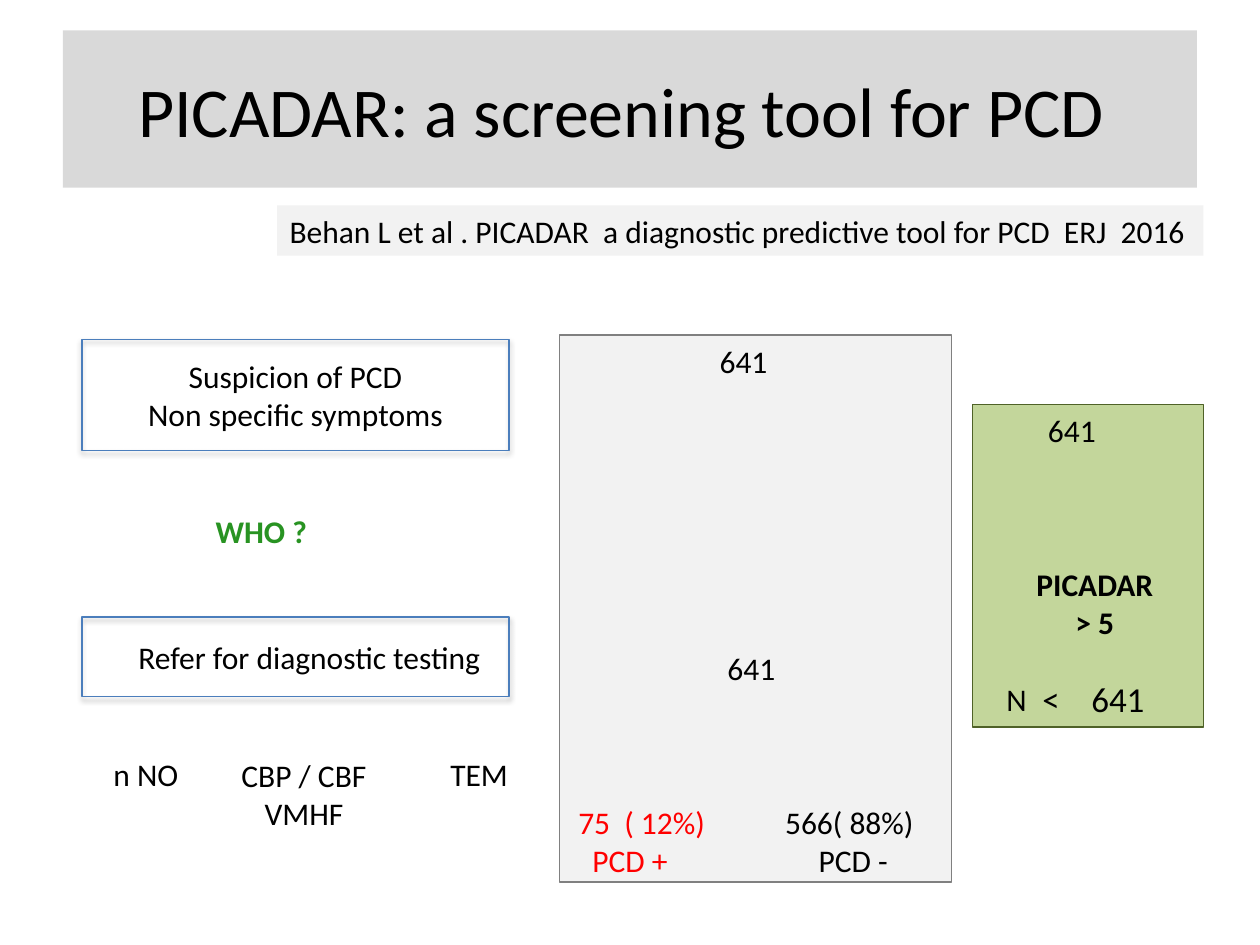
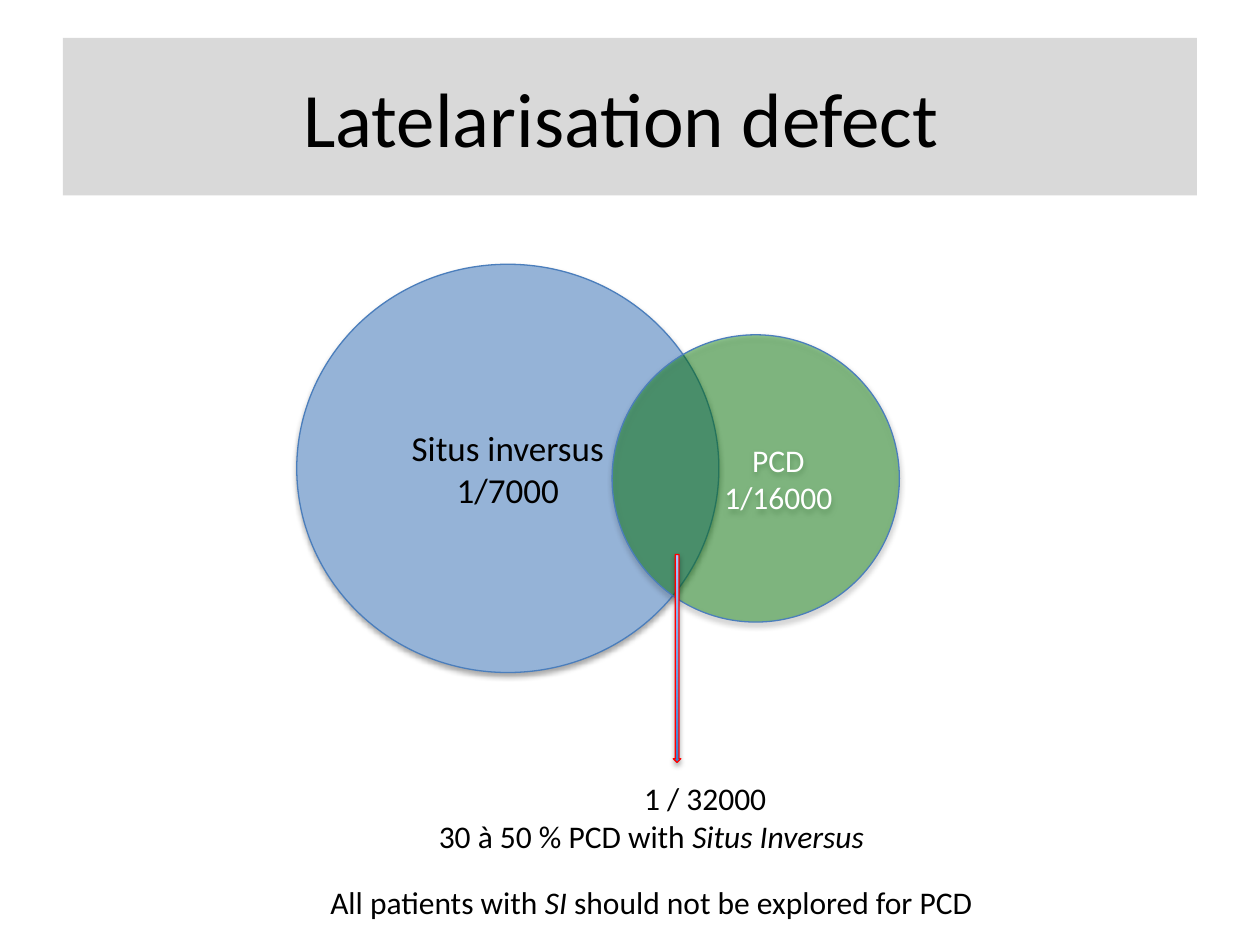
from dataclasses import dataclass

from lxml.etree import SubElement
from pptx import Presentation
from pptx.dml.color import RGBColor
from pptx.enum.shapes import MSO_SHAPE
from pptx.enum.text import MSO_ANCHOR, PP_ALIGN
from pptx.oxml.ns import qn
from pptx.util import Inches, Pt

FONT = "Calibri"
BLACK, WHITE, RED, GREEN = "000000", "FFFFFF", "FF0000", "289322"
BAND, PALE, BLUE = "D9D9D9", "F2F2F2", "4B7EBC"
COLUMNS, ROWS = 10, 7.5  # grid cells on a slide
LINE = 0.305  # height of one text line, in grid rows


@dataclass
class Box:
    """An area measured in grid columns and rows."""
    left: float
    top: float
    width: float
    height: float

    def around(self, x, y, width, height):
        """A box whose centre lies at shares x and y of this one."""
        return Box(self.left + x * self.width - width / 2,
                   self.top + y * self.height - height / 2, width, height)

    def line(self, index, x, width=1.5, lines=1):
        """A box for text lines from the given line on, centred at share x."""
        middle = 0.05 + (index + lines / 2) * LINE
        return self.around(x, middle / self.height, width, lines * LINE)

    def place(self):
        column, row = Inches(10) / COLUMNS, Inches(7.5) / ROWS
        return (round(self.left * column), round(self.top * row),
                round(self.width * column), round(self.height * row))


def color(value):
    return RGBColor.from_string(value)


def write(shape, text, size=18, ink=BLACK, bold=False, align=PP_ALIGN.CENTER,
          left=0.0, right=0.0, wrap=True):
    """Fill a shape with lines of text; *stars* enclose italics."""
    frame = shape.text_frame
    frame.word_wrap = wrap
    frame.vertical_anchor = MSO_ANCHOR.MIDDLE
    frame.margin_left, frame.margin_right = Inches(left), Inches(right)
    frame.margin_top = frame.margin_bottom = 0
    for number, line in enumerate(text.split("\n")):
        para = frame.add_paragraph() if number else frame.paragraphs[0]
        para.alignment = align
        for index, piece in enumerate(line.split("*")):
            span = para.add_run()
            span.text = piece
            span.font.name, span.font.size = FONT, Pt(size)
            span.font.bold, span.font.italic = bold, index % 2 == 1
            span.font.color.rgb = color(ink)


def label(page, box, text, **style):
    write(page.shapes.add_textbox(*box.place()), text, **style)


def add_shadow(shape):
    effects = shape.element.spPr.find(qn("a:effectLst"))
    outer = SubElement(effects, qn("a:outerShdw"), blurRad=str(Pt(3.1)),
                       dist=str(Pt(1.8)), dir="5400000", rotWithShape="0")
    tint = SubElement(outer, qn("a:srgbClr"), val=BLACK)
    SubElement(tint, qn("a:alpha"), val="35000")


def draw(page, box, kind=MSO_SHAPE.RECTANGLE, fill=None, line=None,
         opacity=100, shadow=False):
    shape = page.shapes.add_shape(kind, *box.place())
    shape.shadow.inherit = False
    if fill:
        shape.fill.solid()
        shape.fill.fore_color.rgb = color(fill)
    else:
        shape.fill.background()
    if opacity < 100:
        tint = shape.element.spPr.find(qn("a:solidFill")).find(qn("a:srgbClr"))
        SubElement(tint, qn("a:alpha"), val=str(opacity * 1000))
    if line:
        shape.line.color.rgb = color(line)
        shape.line.width = Pt(0.75)
    else:
        shape.line.fill.background()
    if shadow:
        add_shadow(shape)
    return shape


def add_page(deck, title, top, size):
    """A blank slide with the grey title band."""
    page = deck.slides.add_slide(deck.slide_layouts[6])
    band = draw(page, Box(0.5, top, 9, 1.25), fill=BAND)
    write(band, title, size=size, left=0.1, right=0.24)
    return page


def referral_path(page, box):
    """Who is suspected, who is referred, and the tests that follow."""
    steps = [("Suspicion of PCD\nNon specific symptoms", 0.11, 0.88, 0),
             ("Refer for diagnostic testing", 0.65, 0.63, 0.22)]
    for text, middle, height, indent in steps:
        step = box.around(0.5, middle, box.width, height)
        draw(page, step, line=BLUE, shadow=True)
        label(page, step, text, left=indent)
    label(page, box.around(0.42, 0.39, 0.93, 0.4), "WHO ?", ink=GREEN, bold=True)
    tests = [("n NO", 0.15, 1), ("CBP / CBF\nVMHF", 0.52, 2), ("TEM", 0.93, 1)]
    for text, x, lines in tests:
        label(page, box.line(10.6, x, lines=lines), text)


def cohort_panel(page, box):
    draw(page, box, fill=PALE, line="808080")
    for index, x in ((0, 0.47), (8, 0.49)):
        label(page, box.line(index, x), "641")
    results = [("75  ( 12%)", "PCD +", 0.21, 0.18, RED),
               ("566( 88%)", "PCD -", 0.74, 0.75, BLACK)]
    for count, result, count_x, result_x, ink in results:
        label(page, box.line(12, count_x), count, ink=ink)
        label(page, box.line(13, result_x), result, ink=ink)


def score_panel(page, box):
    draw(page, box, fill="C3D69B", line="4F6228")
    label(page, box.line(0, 0.43), "641")
    label(page, box.line(4, 0.53, lines=2), "PICADAR\n> 5", bold=True)
    for text, x, size in (("N", 0.19, 18), ("<", 0.34, 20), ("641", 0.63, 20)):
        label(page, box.line(7, x, width=0.6), text, size=size)


def screening_slide(deck):
    page = add_page(deck, "PICADAR: a screening tool for PCD", 0.24, 40)
    citation = draw(page, Box(2.2, 1.63, 7.35, 0.4), fill=PALE)
    write(citation, "Behan L et al . PICADAR  a diagnostic predictive tool "
          "for PCD  ERJ  2016", align=PP_ALIGN.LEFT, left=0.1, wrap=False)
    referral_path(page, Box(0.65, 2.71, 3.39, 3.85))
    cohort_panel(page, Box(4.44, 2.66, 3.11, 4.34))
    score_panel(page, Box(7.72, 3.21, 1.83, 2.56))


def overlap_diagram(page, box):
    """Two overlapping circles and an arrow from the part they share."""
    situs = draw(page, box.around(0.35, 0.41, 3.35, 3.24), MSO_SHAPE.OVAL,
                 fill="95B3D7", line=BLUE, shadow=True)
    write(situs, "Situs inversus\n1/7000", size=20)
    disease = draw(page, box.around(0.76, 0.43, 2.28, 2.28), MSO_SHAPE.OVAL,
                   fill="008000", line=BLUE, opacity=42, shadow=True)
    write(disease, "PCD\n1/16000", ink=WHITE, left=0.36)
    arrow = draw(page, box.around(0.63, 0.79, 0.06, 1.65), MSO_SHAPE.DOWN_ARROW,
                 line=RED, shadow=True)
    arrow.fill.gradient()
    arrow.fill.gradient_angle = 90
    for stop, tint in zip(arrow.fill.gradient_stops, ("3F80CE", "A4C4FF")):
        stop.color.rgb = color(tint)


def overlap_findings(page, box):
    findings = [("1 / 32000", 0.58, 0.16),
                ("30 à 50 % PCD with *Situs Inversus*", 0.5, 0.42),
                ("All patients with *SI* should not be explored for PCD", 0.5, 0.86)]
    for text, x, y in findings:
        label(page, box.around(x, y, 5.37, LINE), text)


def lateralisation_slide(deck):
    page = add_page(deck, "Latelarisation defect", 0.3, 44)
    overlap_diagram(page, Box(2.35, 2.09, 4.8, 3.97))
    overlap_findings(page, Box(2.5, 6.14, 5.34, 1.18))


def main():
    deck = Presentation()
    deck.slide_width, deck.slide_height = Inches(10), Inches(7.5)
    screening_slide(deck)
    lateralisation_slide(deck)
    deck.save("out.pptx")


if __name__ == "__main__":
    main()
